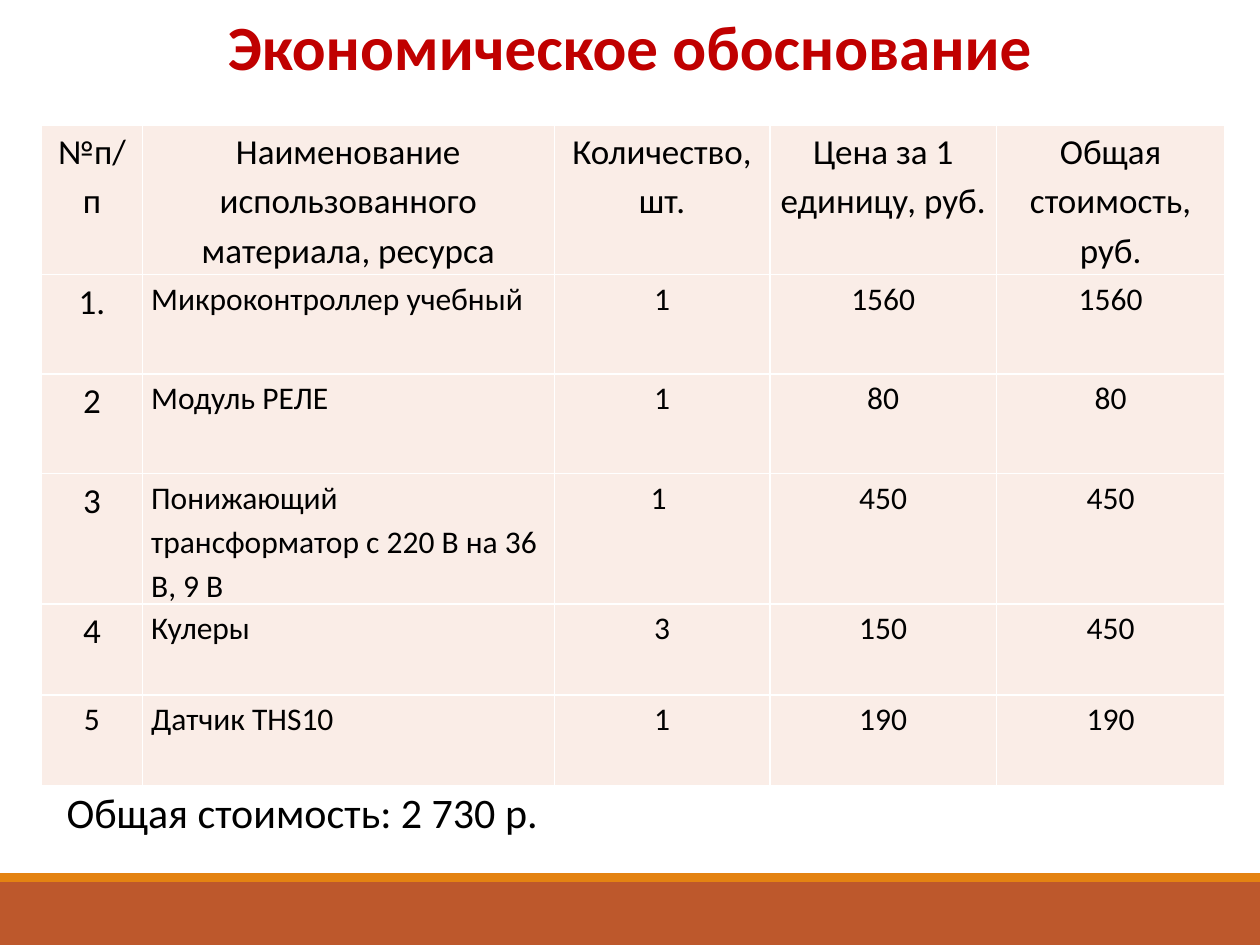
from lxml import etree
from pptx import Presentation
from pptx import util as u
from pptx.dml.color import RGBColor
from pptx.enum import shapes, text
from pptx.oxml import ns

WHITE = RGBColor(0xFF, 0xFF, 0xFF)
BLACK = RGBColor(0, 0, 0)
RED = RGBColor(0xC0, 0, 0)
RUST = RGBColor(0xBD, 0x58, 0x2C)
ORANGE = RGBColor(0xE4, 0x83, 0x12)
BLUSH = RGBColor(0xFA, 0xED, 0xE7)

LEFT, CENTER = text.PP_ALIGN.LEFT, text.PP_ALIGN.CENTER

COLUMN_WIDTHS = (0.8, 3.27, 1.71, 1.8, 1.81)
ROW_HEIGHTS = (1.19, 0.79, 0.79, 0.99, 0.72, 0.72)
COSTS = (
    ("№п/п", "Наименование использованного материала, ресурса",
     "Количество, шт.", "Цена за 1 единицу, руб.", "Общая стоимость, руб."),
    ("1.", "Микроконтроллер учебный", "1", "1560", "1560"),
    ("2", "Модуль РЕЛЕ", "1", "80", "80"),
    ("3", "Понижающий трансформатор с 220 В на 36 В, 9 В", "1 ", "450", "450"),
    ("4", "Кулеры", "3", "150", "450"),
    ("5", "Датчик THS10", "1", "190", "190"),
)


def write(frame, words, size=18, color=BLACK, bold=False, align=LEFT,
          spacing=None, after=None, font="Calibri"):
    para = frame.paragraphs[0]
    para.alignment = align
    if spacing is not None:
        para.line_spacing = spacing
    if after is not None:
        para.space_after = u.Pt(after)
    span = para.add_run()
    span.text = words
    span.font.name = font
    span.font.size = u.Pt(size)
    span.font.bold = bold
    span.font.color.rgb = color


class SlideBuilder:
    fill = BLUSH
    border = WHITE
    border_width = 1
    cell_margin = 0.07

    def __init__(self, slide):
        self.slide = slide

    def band(self, top, height, color):
        band = self.slide.shapes.add_shape(
            shapes.MSO_SHAPE.RECTANGLE, 0, u.Inches(top), u.Inches(10), u.Inches(height))
        band.shadow.inherit = False
        band.fill.solid()
        band.fill.fore_color.rgb = color
        band.line.fill.background()

    def label(self, words, left, top, width, height, **style):
        box = self.slide.shapes.add_textbox(*map(u.Inches, (left, top, width, height)))
        box.text_frame.word_wrap = False
        box.text_frame.auto_size = text.MSO_AUTO_SIZE.SHAPE_TO_FIT_TEXT
        write(box.text_frame, words, **style)

    def table(self, rows, left, top, widths, heights):
        frame = self.slide.shapes.add_table(
            len(rows), len(widths), u.Inches(left), u.Inches(top),
            u.Inches(sum(widths)), u.Inches(sum(heights)))
        table = frame.table
        for column, width in zip(table.columns, widths):
            column.width = u.Inches(width)
        for row, height in zip(table.rows, heights):
            row.height = u.Inches(height)
        last = len(rows) - 1
        for r, values in enumerate(rows):
            for c, value in enumerate(values):
                large = r == 0 or (c == 0 and r < last)
                align = LEFT if r > 0 and c == 1 else CENTER
                self.cell(table.cell(r, c), value, size=20 if large else 18, align=align)

    def cell(self, cell, words, **style):
        cell.margin_left = cell.margin_right = u.Inches(self.cell_margin)
        cell.margin_top = cell.margin_bottom = 0
        write(cell.text_frame, words, spacing=1.15, after=10, **style)
        properties = cell._tc.get_or_add_tcPr()
        for side in ("lnL", "lnR", "lnT", "lnB"):
            line = etree.SubElement(properties, ns.qn(f"a:{side}"),
                                    w=str(u.Pt(self.border_width)))
            solid = etree.SubElement(line, ns.qn("a:solidFill"))
            etree.SubElement(solid, ns.qn("a:srgbClr"), val=str(self.border))
        cell.fill.solid()
        cell.fill.fore_color.rgb = self.fill


def main():
    deck = Presentation()
    deck.slide_width, deck.slide_height = u.Inches(10), u.Inches(7.5)
    builder = SlideBuilder(deck.slides.add_slide(deck.slide_layouts[6]))
    builder.band(7, 0.5, RUST)
    builder.band(6.93, 0.07, ORANGE)
    builder.label("Экономическое обоснование", 1.68, 0.01, 6.64, 0.71,
                  size=36, color=RED, bold=True, align=CENTER)
    builder.table(COSTS, 0.33, 0.99, COLUMN_WIDTHS, ROW_HEIGHTS)
    builder.label("Общая стоимость: 2 730 р.", 0.43, 6.19, 3.97, 0.5, size=24)
    deck.save("out.pptx")


if __name__ == "__main__":
    main()
